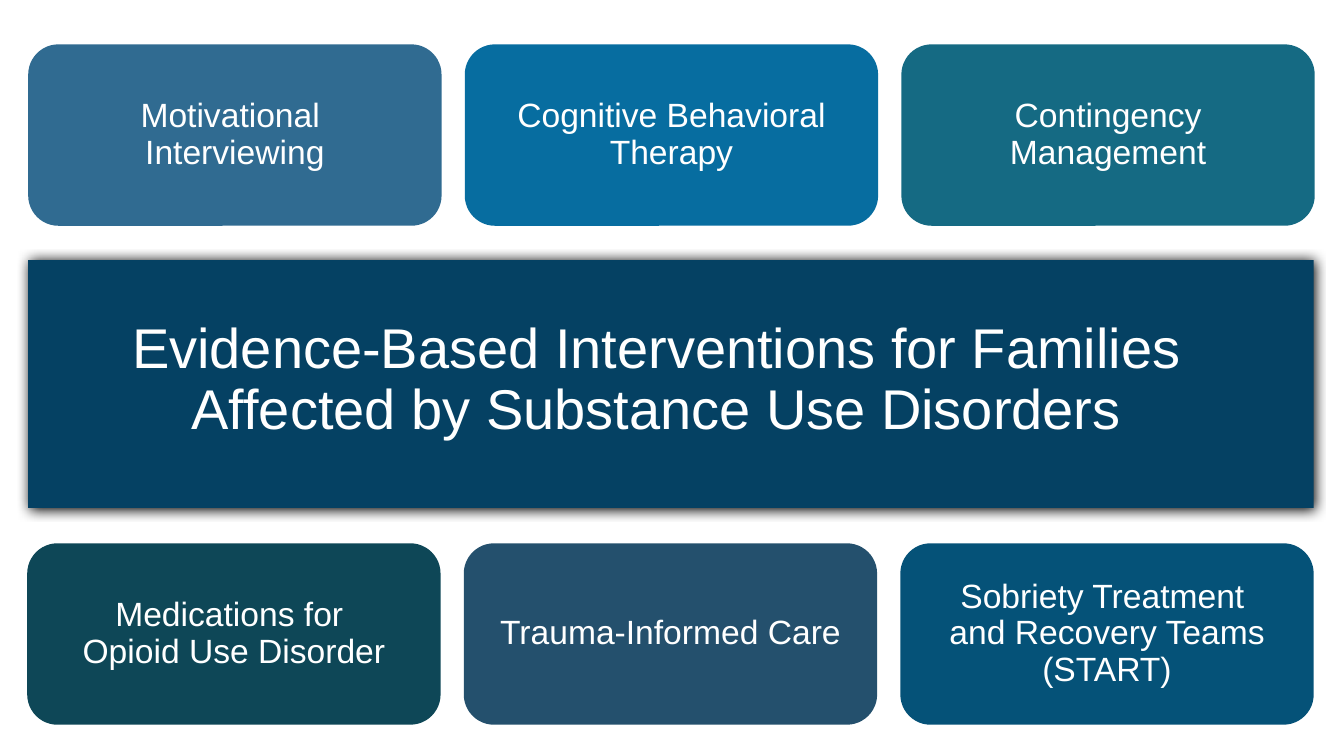
from dataclasses import dataclass

from pptx import Presentation
from pptx.dml.color import RGBColor
from pptx.enum.shapes import MSO_SHAPE as Shape
from pptx.enum.text import MSO_ANCHOR as Anchor, MSO_AUTO_SIZE as AutoSize, PP_ALIGN as Align
from pptx.oxml import parse_xml
from pptx.oxml.ns import nsdecls
from pptx.slide import Slide
from pptx.text.text import TextFrame
from pptx.util import Inches, Pt

FONT = "Arial"
WHITE = RGBColor(0xFF, 0xFF, 0xFF)
NAVY = RGBColor(0x05, 0x41, 0x63)
STEEL = RGBColor(0x30, 0x6B, 0x91)
BLUE = RGBColor(0x07, 0x6D, 0xA0)
TEAL = RGBColor(0x15, 0x6A, 0x83)
DARK_TEAL = RGBColor(0x0E, 0x47, 0x57)
SLATE = RGBColor(0x24, 0x50, 0x6D)
DEEP_BLUE = RGBColor(0x05, 0x52, 0x78)

CARD_W, CARD_H, PITCH = 4.1, 1.8, 4.33


@dataclass
class Card:
    text: str
    fill: RGBColor


@dataclass
class Row:
    left: float
    top: float
    cards: list[Card]


ROWS = [
    Row(0.28, 0.44, [
        Card("Motivational \nInterviewing", STEEL),
        Card("Cognitive Behavioral Therapy", BLUE),
        Card("Contingency Management", TEAL),
    ]),
    Row(0.27, 5.39, [
        Card("Medications for \nOpioid Use Disorder", DARK_TEAL),
        Card("Trauma-Informed Care", SLATE),
        Card("Sobriety Treatment \nand Recovery Teams (START)", DEEP_BLUE),
    ]),
]


def format_text(tf: TextFrame, size: int, anchor: Anchor) -> None:
    tf.word_wrap = True
    tf.auto_size = AutoSize.NONE
    tf.vertical_anchor = anchor
    for p in tf.paragraphs:
        p.alignment = Align.CENTER
        p.line_spacing = 0.9
        p.space_before = Pt(0)
        for r in p.runs:
            r.font.name = FONT
            r.font.size = Pt(size)
            r.font.color.rgb = WHITE


def format_title(s: Slide) -> None:
    sp = s.shapes.title
    sp.left, sp.top = Inches(0.28), Inches(2.58)
    sp.width, sp.height = Inches(12.75), Inches(2.46)
    sp.fill.solid()
    sp.fill.fore_color.rgb = NAVY
    # Soft shadow around the banner
    sp._element.spPr.append(parse_xml(
        f'<a:effectLst {nsdecls("a")}>'
        f'<a:outerShdw blurRad="{Pt(8.5)}" dist="{Pt(1)}" dir="5400000" rotWithShape="0">'
        '<a:srgbClr val="000000"/></a:outerShdw></a:effectLst>'))
    tf = sp.text_frame
    tf.text = ("Evidence-Based Interventions for Families \v"
               "Affected by Substance Use Disorders ")
    tf.margin_left, tf.margin_top = Inches(0.1), Inches(0.6)
    tf.margin_right, tf.margin_bottom = Inches(0.5), Inches(0.05)
    format_text(tf, 40, Anchor.TOP)
    pPr = tf.paragraphs[0]._p.get_or_add_pPr()
    pPr.set("marL", str(Inches(0.26)))
    pPr.set("indent", "0")


def add_card(s: Slide, card: Card, left: float, top: float) -> None:
    sp = s.shapes.add_shape(Shape.ROUNDED_RECTANGLE, Inches(left), Inches(top),
                            Inches(CARD_W), Inches(CARD_H))
    sp.shadow.inherit = False
    sp.fill.solid()
    sp.fill.fore_color.rgb = card.fill
    sp.line.fill.background()
    sp.text_frame.text = card.text
    format_text(sp.text_frame, 24, Anchor.MIDDLE)


def main() -> None:
    prs = Presentation()
    prs.slide_width, prs.slide_height = Inches(13.33), Inches(7.5)
    s = prs.slides.add_slide(prs.slide_layouts[5])

    # Title banner
    format_title(s)

    # Intervention cards above and below the banner
    for row in ROWS:
        for i, card in enumerate(row.cards):
            add_card(s, card, row.left + i * PITCH, row.top)

    prs.save("out.pptx")


if __name__ == "__main__":
    main()
